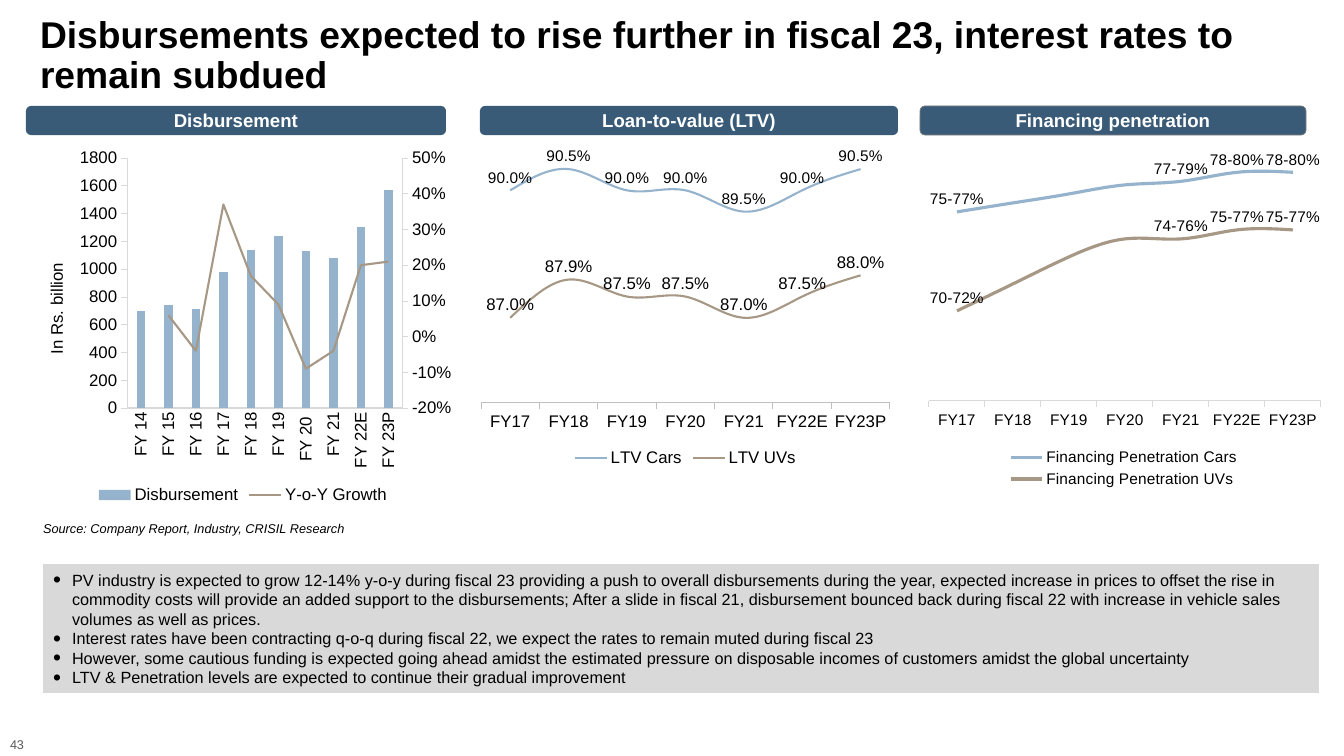
from lxml.etree import SubElement
from pptx import Presentation
from pptx.chart.data import CategoryChartData
from pptx.dml.color import RGBColor
from pptx.enum.chart import (XL_CHART_TYPE, XL_LABEL_POSITION, XL_LEGEND_POSITION,
                             XL_MARKER_STYLE, XL_TICK_LABEL_POSITION, XL_TICK_MARK)
from pptx.enum.shapes import MSO_SHAPE
from pptx.enum.text import MSO_ANCHOR, MSO_AUTO_SIZE, PP_ALIGN
from pptx.oxml import parse_xml
from pptx.oxml.ns import nsdecls, qn
from pptx.util import Pt

# Content
TITLE = "Disbursements expected to rise further in fiscal 23, interest rates to remain subdued"
SOURCE = "Source: Company Report, Industry, CRISIL Research"
PAGE = "43"
HEADS = [("Disbursement", 26, 420), ("Loan-to-value (LTV)", 480, 418),
         ("Financing penetration", 920, 386)]
NOTES = [
    "PV industry is expected to grow 12-14% y-o-y during fiscal 23 providing a push to overall "
    "disbursements during the year, expected increase in prices to offset the rise in commodity "
    "costs will provide an added support to the disbursements; After a slide in fiscal 21, "
    "disbursement bounced back during fiscal 22 with increase in vehicle sales volumes as well "
    "as prices.",
    "Interest rates have been contracting q-o-q during fiscal 22, we expect the rates to remain "
    "muted during fiscal 23",
    "However, some cautious funding is expected going ahead amidst the estimated pressure on "
    "disposable incomes of customers amidst the global uncertainty",
    "LTV & Penetration levels are expected to continue their gradual improvement",
]
YEARS = ["FY 14", "FY 15", "FY 16", "FY 17", "FY 18", "FY 19", "FY 20 ", "FY 21",
         "FY 22E", "FY 23P"]
LOANS = {"Disbursement": [700, 740, 710, 980, 1140, 1240, 1130, 1080, 1300, 1570],
         "Y-o-Y Growth": [None, 0.06, -0.04, 0.37, 0.17, 0.09, -0.09, -0.04, 0.2, 0.21]}
SPAN = ["FY17", "FY18", "FY19", "FY20", "FY21", "FY22E", "FY23P"]
LTV = {"LTV Cars": [0.9, 0.905, 0.9, 0.9, 0.895, 0.9, 0.905],
       "LTV UVs": [0.87, 0.879, 0.875, 0.875, 0.87, 0.875, 0.88]}
SHARE = {"Financing Penetration Cars": [0.765, 0.77, 0.775, 0.78, 0.782, 0.787, 0.787],
         "Financing Penetration UVs": [0.71, 0.725, 0.74, 0.75, 0.75, 0.755, 0.755]}
RANGES = [["75-77%", "", "", "", "77-79%", "78-80%", "78-80%"],
          ["70-72%", "", "", "", "74-76%", "75-77%", "75-77%"]]

HEX = {"navy": "395B77", "blue": "95B3CC", "tan": "A79886", "pale": "D9D9D9",
       "mid": "BFBFBF", "edge": "808080", "grey": "595959", "black": "000000",
       "white": "FFFFFF"}
TONES = ["blue", "tan"]
FACE = "Arial"

# Canvas
WIDE, HIGH = 1344, 756
UNIT = 12192000 / WIDE


def px(*nums):
    return [round(n * UNIT) for n in nums]


def rgb(name):
    return RGBColor.from_string(HEX[name])


def style(font, size, color="black", bold=False, italic=False):
    font.name, font.size, font.bold, font.italic = FACE, Pt(size), bold, italic
    font.color.rgb = rgb(color)


def write(frame, lines, align=PP_ALIGN.LEFT, anchor=MSO_ANCHOR.TOP, wrap=True,
          dot=False, space=None, inset=(10, 5), **look):
    frame.word_wrap, frame.auto_size = wrap, MSO_AUTO_SIZE.NONE
    frame.vertical_anchor = anchor
    frame.margin_left = frame.margin_right = px(inset[0])[0]
    frame.margin_top = frame.margin_bottom = px(inset[1])[0]
    for i, line in enumerate(lines):
        para = frame.paragraphs[0] if i == 0 else frame.add_paragraph()
        para.alignment = align
        if space:
            para.line_spacing = space
        if dot:
            props = para._p.get_or_add_pPr()
            hang = px(19)[0]
            props.set("marL", str(hang))
            props.set("indent", str(-hang))
            SubElement(props, qn("a:buSzPct"), val="140000")
            SubElement(props, qn("a:buFont"), typeface=FACE)
            SubElement(props, qn("a:buChar"), char="•")
        run = para.add_run()
        run.text = line
        style(run.font, **look)


def block(kind, box, fill, edge=None):
    shape = slide.shapes.add_shape(kind, *px(*box))
    shape.shadow.inherit = False
    shape.fill.solid()
    shape.fill.fore_color.rgb = rgb(fill)
    if edge:
        rule(shape, edge, 0.5)
    else:
        shape.line.fill.background()
    return shape


def rule(part, color, width):
    part.line.color.rgb = rgb(color)
    part.line.width = Pt(width)


def plot(kind, box, area, cats, rows, size, low, high, edge):
    """Add a chart whose axes enclose area, given in slide px like box."""
    data = CategoryChartData()
    data.categories = cats
    for name, vals in rows.items():
        data.add_series(name, vals, "General" if max(v or 0 for v in vals) > 1 else "0.0%")
    chart = slide.shapes.add_chart(kind, *px(*box), data).chart
    style(chart.font, size)
    chart.has_title = False
    chart.has_legend = True
    chart.legend.position = XL_LEGEND_POSITION.BOTTOM
    chart.legend.include_in_layout = False
    style(chart.legend.font, size)
    parts = [("x", (area[0] - box[0]) / box[2]), ("y", (area[1] - box[1]) / box[3]),
             ("w", area[2] / box[2]), ("h", area[3] / box[3])]
    body = chart._chartSpace.chart.plotArea
    for old in body.findall(qn("c:layout")):
        body.remove(old)
    body.insert(0, parse_xml(
        f'<c:layout {nsdecls("c")}><c:manualLayout><c:layoutTarget val="inner"/>'
        '<c:xMode val="edge"/><c:yMode val="edge"/>'
        + "".join(f'<c:{k} val="{v:.3f}"/>' for k, v in parts)
        + "</c:manualLayout></c:layout>"))
    base, side = chart.category_axis, chart.value_axis
    base.tick_label_position = XL_TICK_LABEL_POSITION.NEXT_TO_AXIS
    base.major_tick_mark = XL_TICK_MARK.OUTSIDE
    style(base.tick_labels.font, size)
    rule(base.format, edge, 0.75)
    side.has_major_gridlines = False
    side.minimum_scale, side.maximum_scale = low, high
    return chart


def trace(row, color, width, smooth):
    rule(row.format, color, width)
    row.smooth = smooth
    row.marker.style = XL_MARKER_STYLE.NONE


def tag(row, size):
    tags = row.data_labels
    tags.show_value, tags.position = True, XL_LABEL_POSITION.ABOVE
    tags.number_format, tags.number_format_is_linked = "0.0%", False
    style(tags.font, size)


deck = Presentation()
deck.slide_width, deck.slide_height = px(WIDE, HIGH)
slide = deck.slides.add_slide(deck.slide_layouts[5])

# Title
title = slide.shapes.title
title.left, title.top, title.width, title.height = px(40, 6, 1279, 101)
write(title.text_frame, [TITLE], anchor=MSO_ANCHOR.MIDDLE, inset=(0, 0), space=0.9,
      size=26.6, bold=True)

# Column headings
for i, (text, left, width) in enumerate(HEADS):
    bar = block(MSO_SHAPE.ROUNDED_RECTANGLE, (left, 106, width, 29), "navy",
                "edge" if i == 2 else None)
    write(bar.text_frame, [text], align=PP_ALIGN.CENTER, anchor=MSO_ANCHOR.MIDDLE,
          size=13.3, color="white", bold=True)

# Loan-to-value: each point shows its value
chart = plot(XL_CHART_TYPE.LINE, (473, 142, 425, 329), (481, 148, 409, 255),
             SPAN, LTV, 12, 0.85, 0.91, "mid")
chart.value_axis.visible = False
for row, tone, size in zip(chart.plots[0].series, TONES, (11, 12)):
    trace(row, tone, 1.5, True)
    tag(row, size)

# Disbursement: columns, with growth as a line on a second axis
chart = plot(XL_CHART_TYPE.COLUMN_CLUSTERED, (26, 142, 434, 366), (127, 158, 275, 250),
             YEARS, LOANS, 12, 0, 1800, "pale")
chart.category_axis.major_tick_mark = XL_TICK_MARK.NONE
chart.category_axis._element.get_or_add_txPr().bodyPr.set("rot", "-5400000")
side = chart.value_axis
side.major_unit = 200
side.major_tick_mark = XL_TICK_MARK.OUTSIDE
rule(side.format, "pale", 0.5)
side.has_title = True
name = side.axis_title.text_frame.paragraphs[0].add_run()
name.text = "In Rs. billion"
style(name.font, 12)
cols = chart.plots[0]
cols.gap_width, cols.overlap, cols.vary_by_categories = 219, -27, False
cols.series[0].format.fill.solid()
cols.series[0].format.fill.fore_color.rgb = rgb("blue")
growth = cols.series[1]._element
flip = growth.find(qn("c:invertIfNegative"))
if flip is not None:
    growth.remove(flip)
group = parse_xml(f'<c:lineChart {nsdecls("c")}><c:grouping val="standard"/>'
                  '<c:varyColors val="0"/><c:marker val="1"/>'
                  '<c:axId val="501"/><c:axId val="502"/></c:lineChart>')
group.insert(2, growth)
cols._element.addnext(group)
AXIS = ('<c:{tag} {ns}><c:axId val="{own}"/><c:scaling><c:orientation val="minMax"/>{span}'
        '</c:scaling><c:delete val="{gone}"/><c:axPos val="{pos}"/>'
        '<c:numFmt formatCode="0%" sourceLinked="0"/><c:majorTickMark val="out"/>'
        '<c:minorTickMark val="none"/><c:tickLblPos val="nextTo"/>{line}'
        '<c:crossAx val="{other}"/><c:crosses val="{cross}"/>{unit}</c:{tag}>')
line = (f'<c:spPr {nsdecls("a")}><a:ln w="6350"><a:solidFill><a:srgbClr val="{HEX["pale"]}"/>'
        '</a:solidFill></a:ln></c:spPr>')
right = dict(tag="valAx", own=502, other=501, gone=0, pos="r", cross="max", line=line,
             span='<c:max val="0.5"/><c:min val="-0.2"/>', unit='<c:majorUnit val="0.1"/>')
under = dict(tag="catAx", own=501, other=502, gone=1, pos="b", cross="autoZero", line="",
             span="", unit="")
for axis in (right, under):
    side._element.addnext(parse_xml(AXIS.format(ns=nsdecls("c"), **axis)))
trace(chart.plots[1].series[0], "tan", 1.5, False)

# Financing penetration: some points show a range, the others nothing
chart = plot(XL_CHART_TYPE.LINE, (920, 142, 408, 350), (929, 149, 392, 252),
             SPAN, SHARE, 11, 0.66, 0.8, "pale")
chart.value_axis.visible = False
for row, tone, texts in zip(chart.plots[0].series, TONES, RANGES):
    trace(row, tone, 2.25, True)
    tag(row, 11)
    for i, text in enumerate(texts):
        label = row.points[i].data_label
        if text:
            run = label.text_frame.paragraphs[0].add_run()
            run.text = text
            style(run.font, 11)
            label.position = XL_LABEL_POSITION.ABOVE
        else:
            mark = label._get_or_add_dLbl()
            for part in list(mark)[1:]:
                mark.remove(part)
            SubElement(mark, qn("c:delete"), val="1")

# Source, notes and page number
box = slide.shapes.add_textbox(*px(33, 516, 627, 26))
write(box.text_frame, [SOURCE], size=9.1, italic=True)
panel = block(MSO_SHAPE.RECTANGLE, (43, 564, 1276, 129), "pale")
write(panel.text_frame, NOTES, anchor=MSO_ANCHOR.MIDDLE, dot=True, size=11.6)
box = slide.shapes.add_textbox(*px(0, 732, 36, 26))
write(box.text_frame, [PAGE], wrap=False, size=9, color="grey")

deck.save("out.pptx")
